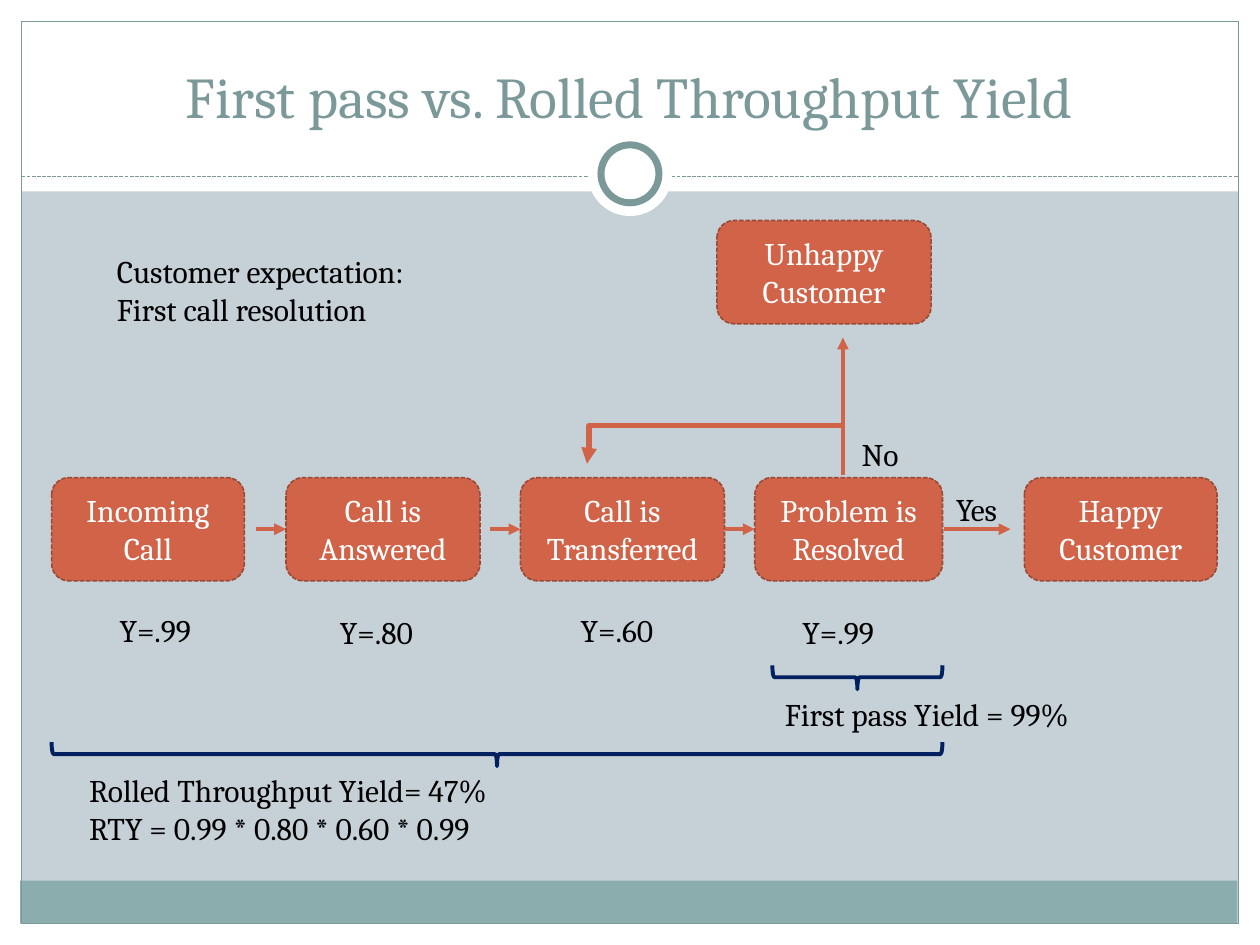
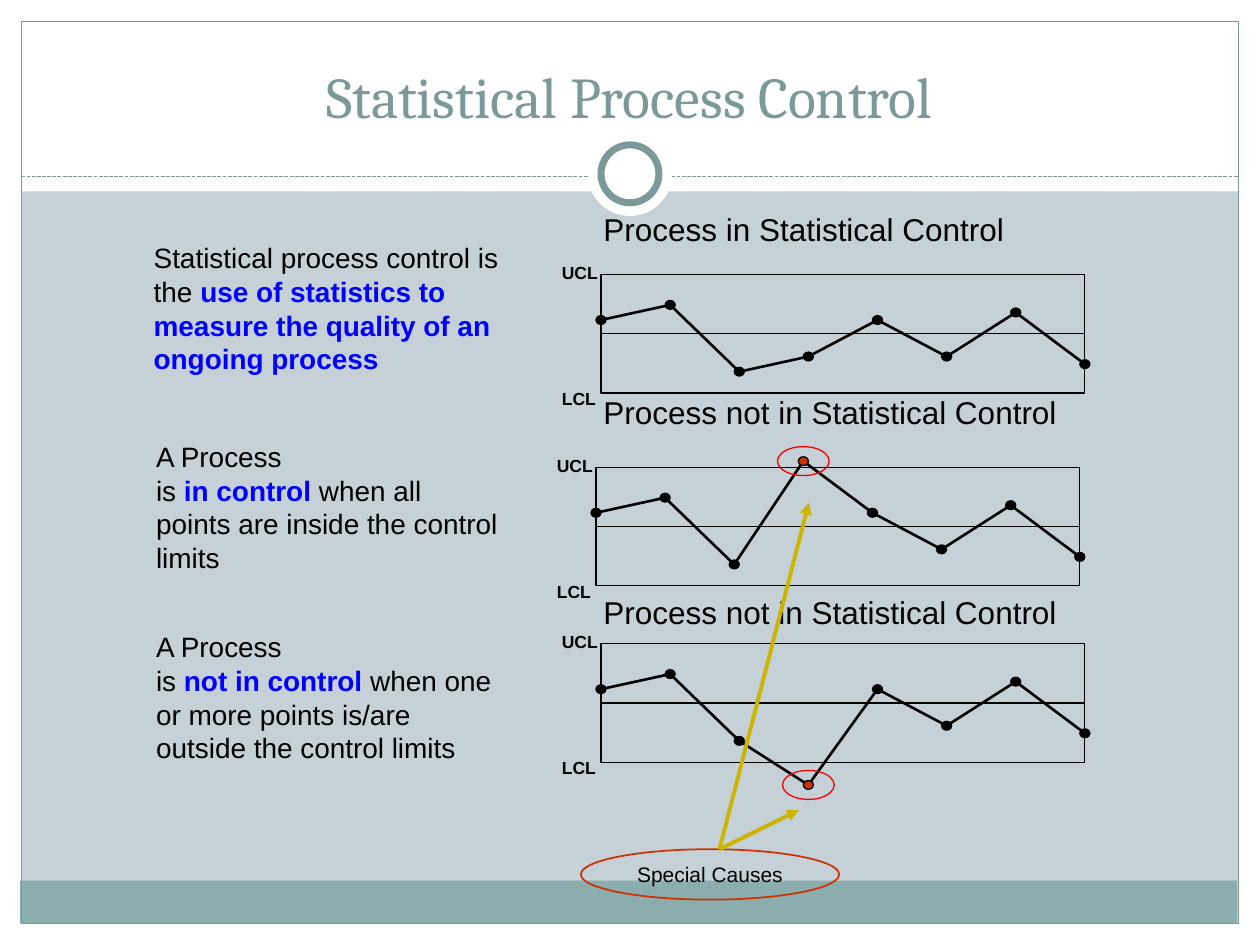
from dataclasses import dataclass
from itertools import pairwise

from lxml.etree import SubElement
from pptx import Presentation
from pptx.dml.color import RGBColor
from pptx.enum.dml import MSO_LINE
from pptx.enum.shapes import MSO_CONNECTOR, MSO_SHAPE
from pptx.enum.text import MSO_ANCHOR, PP_ALIGN
from pptx.oxml.ns import qn
from pptx.util import Inches, Pt

# Shared colours and fonts
WHITE = RGBColor(0xFF, 0xFF, 0xFF)
BLACK = RGBColor(0x00, 0x00, 0x00)
BACKGROUND = RGBColor(0xC5, 0xD1, 0xD7)
TEAL = RGBColor(0x7C, 0x99, 0x9A)
FOOTER_TEAL = RGBColor(0x8C, 0xAD, 0xAE)
ORANGE = RGBColor(0xD1, 0x63, 0x49)
ORANGE_EDGE = RGBColor(0x9B, 0x49, 0x36)
NAVY = RGBColor(0x00, 0x20, 0x60)
BLUE = RGBColor(0x00, 0x00, 0xFF)
RUST = RGBColor(0xCC, 0x33, 0x00)
RED = RGBColor(0xF8, 0x00, 0x00)
GOLD = RGBColor(0xCC, 0xB4, 0x00)
SERIF, SANS = "Cambria", "Arial"


@dataclass(frozen=True)
class Box:
    left: float
    top: float
    width: float
    height: float

    def lengths(self) -> list[Inches]:
        return [Inches(n) for n in (self.left, self.top, self.width, self.height)]


@dataclass(frozen=True)
class Step:
    name: str
    box: Box


@dataclass(frozen=True)
class Label:
    lines: tuple[str, ...]
    box: Box


@dataclass(frozen=True)
class ControlChart:
    heading: str
    heading_top: float
    left: float
    top: float
    fourth_point: float
    special: bool = False


@dataclass(frozen=True)
class Arrow:
    start: tuple[float, float]
    end: tuple[float, float]


# Drawing helpers
def write(shape, *lines: str, font: str = SERIF, size: float = 18,
          color: RGBColor = BLACK, bold: bool = False, align=PP_ALIGN.LEFT,
          anchor=MSO_ANCHOR.TOP, wrap: bool = True, insets=(0.1, 0.05, 0.1, 0.05)):
    """Write one paragraph per line; parts between bars are bold blue."""
    frame = shape.text_frame
    frame.word_wrap = wrap
    frame.vertical_anchor = anchor
    (frame.margin_left, frame.margin_top,
     frame.margin_right, frame.margin_bottom) = map(Inches, insets)
    for number, line in enumerate(lines):
        paragraph = frame.add_paragraph() if number else frame.paragraphs[0]
        paragraph.alignment = align
        for part, piece in enumerate(line.split("|")):
            stressed = part % 2 == 1
            for row, words in enumerate(piece.split("\n")):
                if row:
                    paragraph.add_line_break()
                run = paragraph.add_run()
                run.text = words
                run.font.name = font
                run.font.size = Pt(size)
                run.font.bold = bold or stressed
                run.font.color.rgb = BLUE if stressed else color


def text_box(slide, box: Box, *lines: str, **text_format):
    write(slide.shapes.add_textbox(*box.lengths()), *lines, **text_format)


def add_shape(slide, kind, box: Box, fill: RGBColor | None = None,
              line: RGBColor | None = None, width: float = 0, dashed: bool = False):
    shape = slide.shapes.add_shape(kind, *box.lengths())
    shape.shadow.inherit = False
    if fill is None:
        shape.fill.background()
    else:
        shape.fill.solid()
        shape.fill.fore_color.rgb = fill
    if line is None:
        shape.line.fill.background()
    else:
        shape.line.color.rgb = line
        shape.line.width = Pt(width)
        if dashed:
            shape.line.dash_style = MSO_LINE.SQUARE_DOT
    return shape


def connect(slide, start: tuple[float, float], end: tuple[float, float],
            color: RGBColor, width: float, dashed: bool = False,
            arrow: bool = False, kind=MSO_CONNECTOR.STRAIGHT):
    connector = slide.shapes.add_connector(kind, *map(Inches, (*start, *end)))
    connector.line.color.rgb = color
    connector.line.width = Pt(width)
    if dashed:
        connector.line.dash_style = MSO_LINE.SQUARE_DOT
    properties = connector._element.spPr
    if arrow:
        SubElement(properties.find(qn("a:ln")), qn("a:tailEnd"), type="triangle")
    SubElement(properties, qn("a:effectLst"))
    return connector


def centred(x: float, y: float, width: float, height: float) -> Box:
    return Box(x - width / 2, y - height / 2, width, height)


# Frame, bands and title that both slides share
MARGINS = (
    Box(0, 7.33, 10, 0.17),
    Box(0, 0, 10, 1.52),
    Box(0, 0, 0.17, 7.5),
    Box(9.83, 0, 0.17, 7.5),
)


def titled_slide(deck, title: str):
    slide = deck.slides.add_slide(deck.slide_layouts[6])
    slide.background.fill.solid()
    slide.background.fill.fore_color.rgb = BACKGROUND
    for margin in MARGINS:
        add_shape(slide, MSO_SHAPE.RECTANGLE, margin, fill=WHITE)
    add_shape(slide, MSO_SHAPE.RECTANGLE, Box(0.16, 6.99, 9.66, 0.34), fill=FOOTER_TEAL)
    add_shape(slide, MSO_SHAPE.RECTANGLE, Box(0.17, 0.17, 9.66, 7.16), line=TEAL, width=0.75)
    connect(slide, (0.17, 1.4), (9.83, 1.4), TEAL, 0.75, dashed=True)
    add_shape(slide, MSO_SHAPE.OVAL, centred(5, 1.38, 0.67, 0.67), fill=WHITE)
    add_shape(slide, MSO_SHAPE.OVAL, centred(5, 1.38, 0.46, 0.46),
              fill=WHITE, line=TEAL, width=4)
    text_box(slide, Box(0.33, 0.25, 9.33, 0.83), title, size=33, color=TEAL,
             align=PP_ALIGN.CENTER, anchor=MSO_ANCHOR.BOTTOM)
    return slide


# Slide 1: call flow and its yields
STEP_TOP, STEP_HEIGHT = 3.79, 0.82
FLOW_Y = 4.2
STEPS = (
    Step("Incoming Call", Box(0.41, STEP_TOP, 1.53, STEP_HEIGHT)),
    Step("Call is Answered", Box(2.27, STEP_TOP, 1.54, STEP_HEIGHT)),
    Step("Call is Transferred", Box(4.13, STEP_TOP, 1.62, STEP_HEIGHT)),
    Step("Problem is Resolved", Box(5.99, STEP_TOP, 1.49, STEP_HEIGHT)),
    Step("Happy Customer", Box(8.13, STEP_TOP, 1.53, STEP_HEIGHT)),
    Step("Unhappy Customer", Box(5.69, 1.75, 1.7, STEP_HEIGHT)),
)
FLOW_ARROWS = (
    Arrow((2.03, FLOW_Y), (2.27, FLOW_Y)),
    Arrow((3.89, FLOW_Y), (4.13, FLOW_Y)),
    Arrow((5.75, FLOW_Y), (5.99, FLOW_Y)),
    Arrow((7.49, FLOW_Y), (8.02, FLOW_Y)),
    Arrow((6.69, 3.77), (6.69, 2.68)),
)
FLOW_LABELS = (
    Label(("Y=.99",), Box(0.85, 4.8, 0.85, 0.36)),
    Label(("Y=.80",), Box(2.6, 4.82, 0.87, 0.36)),
    Label(("Y=.60",), Box(4.51, 4.8, 0.86, 0.36)),
    Label(("Y=.99",), Box(6.27, 4.82, 0.85, 0.36)),
    Label(("Yes",), Box(7.49, 3.84, 0.57, 0.36)),
    Label(("No",), Box(6.74, 3.4, 0.52, 0.36)),
    Label(("Customer expectation:", "First call resolution"), Box(0.83, 1.95, 2.7, 0.63)),
    Label(("First pass Yield = 99%",), Box(6.13, 5.47, 2.68, 0.4)),
    Label(("Rolled Throughput Yield= 47%", "RTY = 0.99 * 0.80 * 0.60 * 0.99"),
          Box(0.61, 6.07, 3.76, 1.01)),
)
YIELD_BRACES = (Box(6.71, 4.7, 0.19, 1.35), Box(3.85, 2.45, 0.19, 7.07))


def build_yield_slide(deck):
    slide = titled_slide(deck, "First pass vs. Rolled Throughput Yield")
    for step in STEPS:
        card = add_shape(slide, MSO_SHAPE.ROUNDED_RECTANGLE, step.box, fill=ORANGE,
                         line=ORANGE_EDGE, width=0.9, dashed=True)
        write(card, step.name, color=WHITE, align=PP_ALIGN.CENTER, anchor=MSO_ANCHOR.MIDDLE)
    for arrow in FLOW_ARROWS:
        connect(slide, arrow.start, arrow.end, ORANGE, 2.25, arrow=True)

    # Unresolved calls return to the transfer step
    rework = connect(slide, (6.69, 3.38), (4.66, 3.68), ORANGE, 3, arrow=True,
                     kind=MSO_CONNECTOR.ELBOW)
    bend = rework._element.spPr.find(qn("a:prstGeom")).get_or_add_avLst()
    SubElement(bend, qn("a:gd"), name="adj1", fmla="val 99300")

    for label in FLOW_LABELS:
        text_box(slide, label.box, *label.lines, wrap=False)
    for span in YIELD_BRACES:
        brace = add_shape(slide, MSO_SHAPE.LEFT_BRACE, span, line=NAVY, width=2.25)
        brace.rotation = 270


# Slide 2: control charts and definitions
CHART_WIDTH, HALF_HEIGHT = 3.84, 0.47
FIRST_POINTS = (0.36, 0.24, 0.77)  # distance below the upper limit
LAST_POINTS = (0.36, 0.65, 0.3, 0.71)
CONTROL_CHARTS = (
    ControlChart("Process in Statistical Control", 1.62, 4.77, 2.18, 0.65),
    ControlChart("Process not in Statistical Control", 3.07, 4.73, 3.71, -0.05, True),
    ControlChart("Process not in Statistical Control", 4.66, 4.77, 5.11, 1.12, True),
)
DEFINITIONS = (
    Label(("A Process\nis |in control| when all points are inside the control limits",),
          Box(1.14, 3.44, 2.91, 1.21)),
    Label(("A Process\nis |not in control| when one or more points is/are "
           "outside the control limits",), Box(1.14, 4.95, 2.91, 1.21)),
)
CAUSE_TOP = (5.71, 6.74)


def draw_control_chart(slide, chart: ControlChart):
    text_box(slide, Box(4.69, chart.heading_top, 3.81, 0.4), chart.heading, font=SANS)
    for half in range(2):
        add_shape(slide, MSO_SHAPE.RECTANGLE,
                  Box(chart.left, chart.top + half * HALF_HEIGHT, CHART_WIDTH, HALF_HEIGHT),
                  line=BLACK)
    for limit, offset in (("UCL", -0.1), ("LCL", 0.9)):
        text_box(slide, Box(chart.left - 0.31, chart.top + offset, 0.29, 0.17), limit,
                 font=SANS, size=10, bold=True, wrap=False, insets=(0, 0, 0, 0))

    depths = (*FIRST_POINTS, chart.fourth_point, *LAST_POINTS)
    gap = CHART_WIDTH / (len(depths) - 1)
    points = [(chart.left + i * gap, chart.top + depth) for i, depth in enumerate(depths)]
    for start, end in pairwise(points):
        connect(slide, start, end, BLACK, 1.5)
    for i, point in enumerate(points):
        outlier = chart.special and i == len(FIRST_POINTS)
        add_shape(slide, MSO_SHAPE.OVAL, centred(*point, 0.08, 0.07),
                  fill=RUST if outlier else BLACK, line=BLACK)
        if outlier:
            add_shape(slide, MSO_SHAPE.OVAL, centred(*point, 0.41, 0.23), line=RED)


def build_control_slide(deck):
    slide = titled_slide(deck, "Statistical Process Control")
    text_box(slide, Box(1.14, 1.89, 2.9, 1.11),
             "Statistical process control is the |use of statistics to measure "
             "the quality of an ongoing process|",
             font=SANS, size=16, anchor=MSO_ANCHOR.MIDDLE, insets=(0.08, 0, 0, 0))
    for definition in DEFINITIONS:
        text_box(slide, definition.box, *definition.lines, font=SANS, size=16)
    for chart in CONTROL_CHARTS:
        draw_control_chart(slide, chart)

    # Special causes point at the outliers
    causes = add_shape(slide, MSO_SHAPE.OVAL, Box(4.61, 6.74, 2.05, 0.4), line=RUST, width=1)
    write(causes, "Special Causes", font=SANS, size=12,
          align=PP_ALIGN.CENTER, anchor=MSO_ANCHOR.MIDDLE)
    for outlier in ((6.42, 3.99), (6.34, 6.43)):
        connect(slide, CAUSE_TOP, outlier, GOLD, 2.25, arrow=True)


def main():
    deck = Presentation()
    deck.slide_width, deck.slide_height = Inches(10), Inches(7.5)
    build_yield_slide(deck)
    build_control_slide(deck)
    deck.save("out.pptx")


if __name__ == "__main__":
    main()
